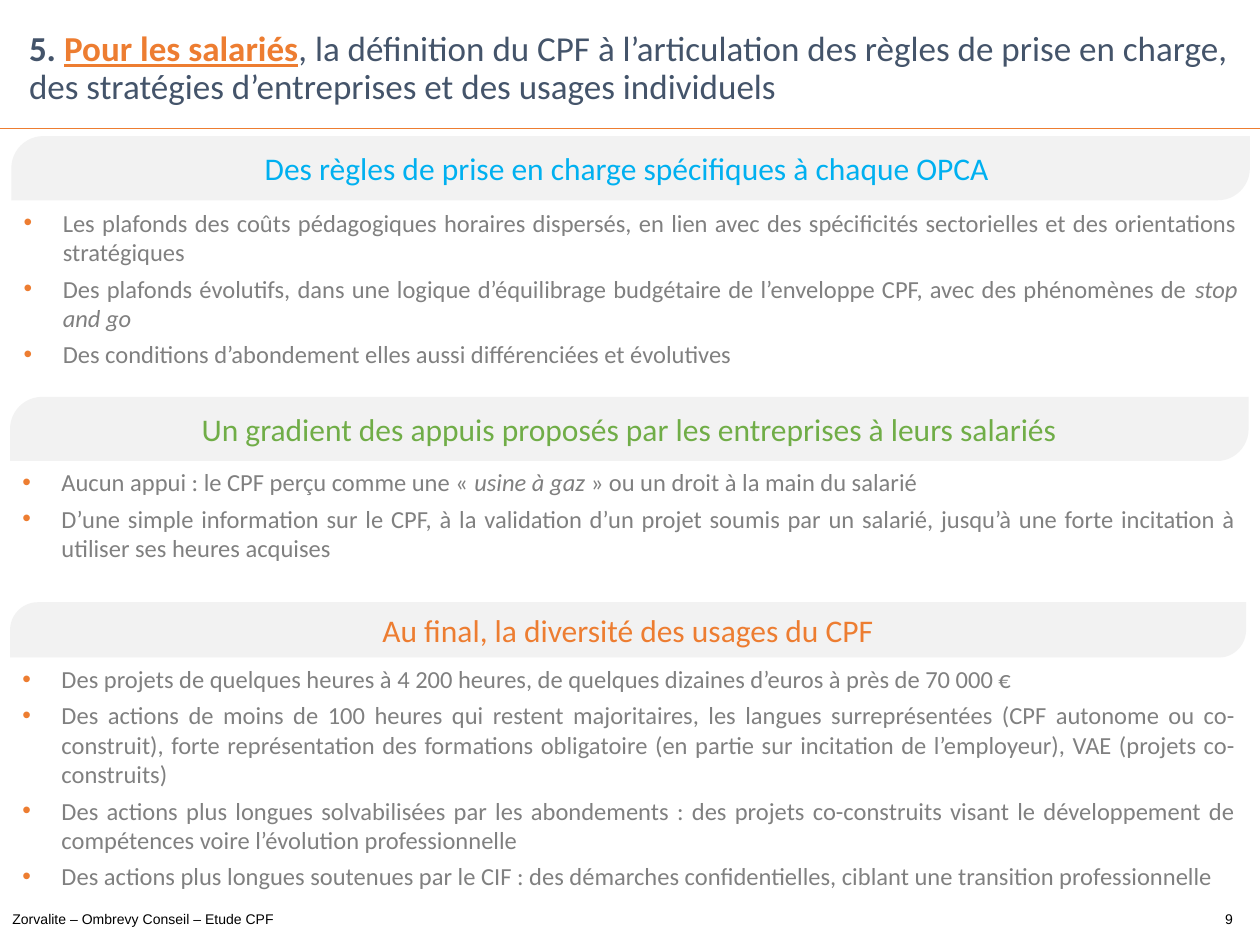
from lxml import etree
from pptx import Presentation
from pptx.dml.color import RGBColor
from pptx.enum.shapes import MSO_CONNECTOR, MSO_SHAPE
from pptx.enum.text import MSO_ANCHOR, MSO_AUTO_SIZE, PP_ALIGN
from pptx.oxml.ns import qn
from pptx.util import Inches, Pt

COLORS = {
    "orange": "ED7D31", "navy": "44546A", "blue": "00B0F0", "green": "70AD47",
    "grey": "808080", "band": "F2F2F2", "white": "FFFFFF", "black": "000000",
}

# heading, colour, heading box, body box, bullets as (text, italic) runs
SECTIONS = [
    ("Des règles de prise en charge spécifiques à chaque OPCA ", "blue",
     (0.09, 1.08, 9.83, 0.51), (0.09, 1.6, 9.83, 1.46), [
         [("Les plafonds des coûts pédagogiques horaires dispersés, en lien avec des "
           "spécificités sectorielles et des orientations stratégiques", False)],
         [("Des plafonds évolutifs, dans une logique d’équilibrage budgétaire de "
           "l’enveloppe CPF, avec des phénomènes de ", False), ("stop and go", True)],
         [("Des conditions d’abondement elles aussi différenciées et évolutives", False)],
     ]),
    ("Un gradient des appuis proposés par les entreprises à leurs salariés", "green",
     (0.08, 3.15, 9.83, 0.51), (0.08, 3.66, 9.83, 1.04), [
         [("Aucun appui : le CPF perçu comme une « ", False), ("usine à gaz", True),
          (" » ou un droit à la main du salarié", False)],
         [("D’une simple information sur le CPF, à la validation d’un projet soumis par "
           "un salarié, jusqu’à une forte incitation à utiliser ses heures acquises", False)],
     ]),
    ("Au final, la diversité des usages du CPF", "orange",
     (0.08, 4.78, 9.81, 0.44), (0.08, 5.22, 9.83, 1.91), [
         [("Des projets de quelques heures à 4 200 heures, de quelques dizaines d’euros "
           "à près de 70 000 €", False)],
         [("Des actions de moins de 100 heures qui restent majoritaires, les langues "
           "surreprésentées (CPF autonome ou co-construit), forte représentation des "
           "formations obligatoire (en partie sur incitation de l’employeur), VAE "
           "(projets co-construits)", False)],
         [("Des actions plus longues solvabilisées par les abondements : des projets "
           "co-construits visant le développement de compétences voire l’évolution "
           "professionnelle", False)],
         [("Des actions plus longues soutenues par le CIF : des démarches "
           "confidentielles, ciblant une transition professionnelle", False)],
     ]),
]


def style(run, size, color, font="Calibri", bold=False, italic=False):
    run.font.name = font
    run.font.size = Pt(size)
    run.font.bold = bold
    run.font.italic = italic
    run.font.color.rgb = RGBColor.from_string(COLORS[color])


def add_panel(kind, box, fill, anchor):
    """Add a filled shape without outline or shadow."""
    panel = slide.shapes.add_shape(kind, *map(Inches, box))
    panel.shadow.inherit = False
    panel.fill.solid()
    panel.fill.fore_color.rgb = RGBColor.from_string(COLORS[fill])
    panel.line.fill.background()
    panel.text_frame.word_wrap = True
    panel.text_frame.vertical_anchor = anchor
    return panel


prs = Presentation()
prs.slide_width, prs.slide_height = Inches(10), Inches(7.5)
slide = prs.slides.add_slide(prs.slide_layouts[5])

# Title
title = slide.shapes.title
title.left, title.top = Inches(-0.01), Inches(0.06)
title.width, title.height = Inches(10.01), Inches(0.98)
frame = title.text_frame
frame.auto_size = MSO_AUTO_SIZE.NONE
frame.word_wrap = True
frame.vertical_anchor = MSO_ANCHOR.MIDDLE
frame.margin_left = frame.margin_right = Inches(0.24)
frame.margin_top = frame.margin_bottom = Inches(0.04)
heading = frame.paragraphs[0]
heading.alignment = PP_ALIGN.LEFT
heading.line_spacing = 0.9
for text, color, bold, underline in [
    ("5. ", "navy", True, False),
    ("Pour les salariés", "orange", True, True),
    (", la définition du CPF à l’articulation des règles de prise en charge, des "
     "stratégies d’entreprises et des usages individuels", "navy", False, False),
]:
    run = heading.add_run()
    run.text = text
    style(run, 20, color, bold=bold)
    run.font.underline = underline

rule = slide.shapes.add_connector(
    MSO_CONNECTOR.STRAIGHT, Inches(0), Inches(1.02), Inches(10.01), Inches(1.02))
rule.line.color.rgb = RGBColor.from_string(COLORS["orange"])
rule.line.width = Pt(1)
etree.SubElement(rule._element.spPr, qn("a:effectLst"))

# Sections
for section, color, band_box, body_box, bullets in SECTIONS:
    band = add_panel(MSO_SHAPE.ROUND_2_DIAG_RECTANGLE, band_box, "band", MSO_ANCHOR.MIDDLE)
    band.adjustments[0], band.adjustments[1] = 0.5, 0
    band.text_frame.text = section
    para = band.text_frame.paragraphs[0]
    para.alignment = PP_ALIGN.CENTER
    para.space_before = Pt(4)
    style(para.runs[0], 18, color)

    body = add_panel(MSO_SHAPE.RECTANGLE, body_box, "white", MSO_ANCHOR.TOP).text_frame
    for index, bullet in enumerate(bullets):
        para = body.add_paragraph() if index else body.paragraphs[0]
        para.alignment = PP_ALIGN.JUSTIFY
        para.space_before = Pt(4)
        props = para._p.get_or_add_pPr()
        props.set("marL", str(Inches(0.31)))
        props.set("indent", str(Inches(-0.31)))
        bullet_color = etree.SubElement(props, qn("a:buClr"))
        etree.SubElement(bullet_color, qn("a:srgbClr"), val=COLORS["orange"])
        etree.SubElement(props, qn("a:buFont"), typeface="Arial")
        etree.SubElement(props, qn("a:buChar"), char="•")
        for text, italic in bullet:
            run = para.add_run()
            run.text = text
            style(run, 14, "grey", italic=italic)

# Footer
for text, box, align in [
    ("Zorvalite – Ombrevy Conseil – Etude CPF", (0, 7.11, 9.51, 0.39), PP_ALIGN.LEFT),
    ("9", (9.51, 7.1, 0.49, 0.4), PP_ALIGN.CENTER),
]:
    footer = slide.shapes.add_textbox(*map(Inches, box)).text_frame
    footer.word_wrap = True
    footer.vertical_anchor = MSO_ANCHOR.MIDDLE
    footer.text = text
    para = footer.paragraphs[0]
    para.alignment = align
    para.line_spacing = 0.85
    style(para.runs[0], 8, "black", font="Arial")

prs.save("out.pptx")
